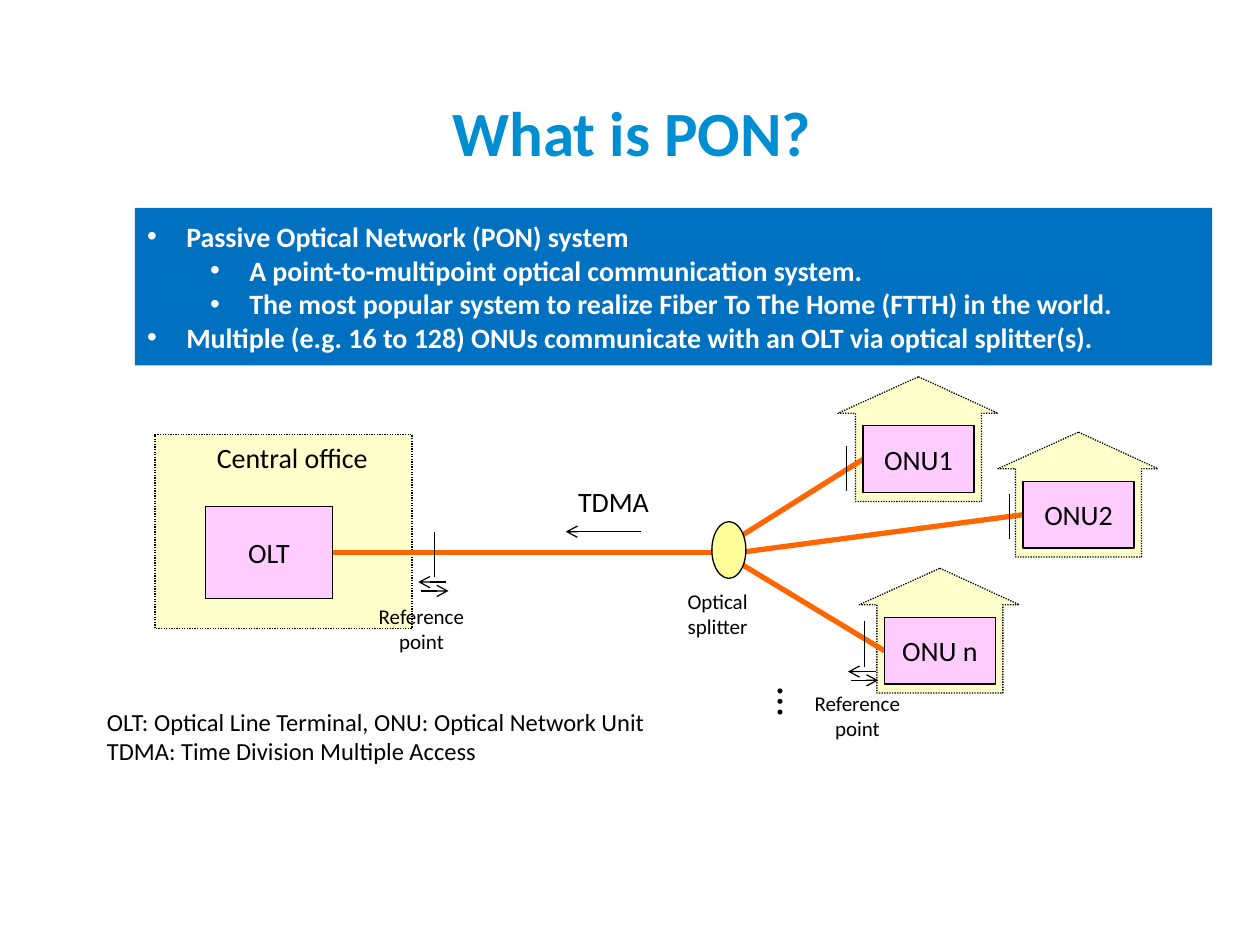
from lxml import etree
from pptx import Presentation, util as u
from pptx.dml.color import RGBColor
from pptx.enum import dml, shapes, text
from pptx.oxml.ns import qn

THEME = {
    "font": "Calibri",
    "title": "008ED3", "panel": "0070C0", "white": "FFFFFF", "ink": "000000",
    "site": "FFFFCC", "unit": "FFCCFF", "splitter": "FFFF99", "fiber": "FF6600",
    "title_size": 36, "dots_size": 24, "body_size": 16, "legend_size": 14, "small_size": 12,
}
LEFT, CENTER = text.PP_ALIGN.LEFT, text.PP_ALIGN.CENTER
TOP, MIDDLE = text.MSO_ANCHOR.TOP, text.MSO_ANCHOR.MIDDLE
OUTLINE = 0.75
Inches = u.Inches

presentation = Presentation()
presentation.slide_width, presentation.slide_height = Inches(10), Inches(7.5)
slide = presentation.slides.add_slide(presentation.slide_layouts[5])


def write(shape, lines, size="body_size", color="ink", bold=False, align=CENTER,
          anchor=TOP, wrap=True, inset=(0.1, 0.05), bullets=None):
    """Fill a shape with paragraphs; bullets holds one left margin per line."""
    frame = shape.text_frame
    side, edge = map(Inches, inset)
    frame_format = {"word_wrap": wrap, "vertical_anchor": anchor, "margin_left": side,
                    "margin_right": side, "margin_top": edge, "margin_bottom": edge,
                    "auto_size": text.MSO_AUTO_SIZE.NONE}
    for name, value in frame_format.items():
        setattr(frame, name, value)
    for index, line in enumerate(lines):
        paragraph = frame.paragraphs[0] if index == 0 else frame.add_paragraph()
        paragraph.text = line
        paragraph.alignment = align
        if bullets:
            properties = paragraph._p.get_or_add_pPr()
            properties.set("marL", str(Inches(bullets[index])))
            properties.set("indent", str(Inches(-0.31)))
            etree.SubElement(properties, qn("a:buFont"), typeface="Arial")
            etree.SubElement(properties, qn("a:buChar"), char="•")
            paragraph.level = int(bullets[index] > bullets[0])
        font_format = {"name": THEME["font"], "size": u.Pt(THEME[size]), "bold": bold}
        for name, value in font_format.items():
            setattr(paragraph.font, name, value)
        paragraph.font.color.rgb = RGBColor.from_string(THEME[color])


def add_line(x1, y1, x2, y2, color="ink", width=OUTLINE, arrow=False):
    line = slide.shapes.add_connector(shapes.MSO_CONNECTOR.STRAIGHT,
                                      *map(Inches, (x1, y1, x2, y2)))
    line.line.color.rgb = RGBColor.from_string(THEME[color])
    line.line.width = u.Pt(width)
    if arrow:
        etree.SubElement(line.line._get_or_add_ln(), qn("a:tailEnd"), type="arrow")
    etree.SubElement(line._element.spPr, qn("a:effectLst"))
    return line


# Title
title = slide.shapes.title
title.left, title.top, title.width, title.height = map(Inches, (0.36, 0.74, 9.31, 0.86))
write(title, ["What is PON?"], "title_size", "title", bold=True, inset=(0, 0))

# Houses: outline relative to the top left corner
HOUSE = [(0.64, 0), (1.27, 0.29), (1.14, 0.29), (1.14, 0.99),
         (0.14, 0.99), (0.14, 0.29), (0, 0.29)]
onus = [("ONU1", 6.65, 2.99), ("ONU2", 7.92, 3.43), ("ONU n", 6.82, 4.51)]
sites = []
for name, left, top in onus:
    corners = [(Inches(left + x), Inches(top + y)) for x, y in HOUSE]
    builder = slide.shapes.build_freeform(*corners[0])
    builder.add_line_segments(corners[1:], close=True)
    sites.append(builder.convert_to_shape())
office = slide.shapes.add_shape(shapes.MSO_SHAPE.RECTANGLE,
                                *map(Inches, (1.23, 3.45, 2.04, 1.54)))
for site in sites + [office]:
    site.shadow.inherit = False
    site.fill.solid()
    site.fill.fore_color.rgb = RGBColor.from_string(THEME["site"])
    site.line.color.rgb = RGBColor.from_string(THEME["ink"])
    site.line.width = u.Pt(OUTLINE)
    site.line.dash_style = dml.MSO_LINE.ROUND_DOT

# Equipment, with a fiber from each unit to the splitter
fiber_starts = [(5.84, 4.28), (5.83, 4.39), (5.69, 4.36)]
olt_left, olt_top, olt_width, olt_height = 1.63, 4.02, 1.01, 0.73
units = [("OLT", olt_left, olt_top, olt_width, olt_height,
          (5.76, olt_top + olt_height / 2), 3)]
for (name, left, top), start in zip(onus, fiber_starts):
    units.append((name, left + 0.2, top + 0.39, 0.88, 0.53, start, 1))
for name, left, top, width, height, start, side in units:
    fiber = add_line(*start, left, top, "fiber", 3)
    unit = slide.shapes.add_shape(shapes.MSO_SHAPE.RECTANGLE,
                                  *map(Inches, (left, top, width, height)))
    unit.shadow.inherit = False
    unit.fill.solid()
    unit.fill.fore_color.rgb = RGBColor.from_string(THEME["unit"])
    unit.line.color.rgb = RGBColor.from_string(THEME["ink"])
    unit.line.width = u.Pt(OUTLINE)
    write(unit, [name], anchor=MIDDLE, inset=(0, 0.05))
    fiber.end_connect(unit, side)

splitter = slide.shapes.add_shape(shapes.MSO_SHAPE.OVAL,
                                  *map(Inches, (5.65, 4.14, 0.27, 0.45)))
splitter.shadow.inherit = False
splitter.fill.solid()
splitter.fill.fore_color.rgb = RGBColor.from_string(THEME["splitter"])
splitter.line.color.rgb = RGBColor.from_string(THEME["ink"])
splitter.line.width = u.Pt(OUTLINE)

# Reference points: a tick, with a pair of arrows below some of them
ticks = [(6.72, 3.54, False), (8.01, 3.92, False), (6.86, 4.93, True), (3.45, 4.22, True)]
for x, y, has_arrows in ticks:
    add_line(x, y, x, y + 0.36)
    if has_arrows:
        add_line(x + 0.09, y + 0.4, x - 0.13, y + 0.4, arrow=True)
        add_line(x - 0.11, y + 0.47, x + 0.11, y + 0.47, arrow=True)
add_line(5.09, 4.22, 4.49, 4.22, arrow=True)

# Labels
labels = [
    (["TDMA"], 4.49, 3.8, 0.77, 0.37, {"align": LEFT, "wrap": False}),
    (["Central office"], 1.15, 3.45, 2.34, 0.37, {}),
    (["Optical splitter"], 5.2, 4.62, 0.99, 0.5, {"size": "small_size"}),
    (["Reference point"], 6.18, 5.43, 1.25, 0.5, {"size": "small_size"}),
    (["Reference point"], 2.72, 4.74, 1.25, 0.5, {"size": "small_size"}),
    (["OLT: Optical Line Terminal, ONU: Optical Network Unit",
      "TDMA: Time Division Multiple Access"], 0.75, 5.56, 4.56, 0.57,
     {"size": "legend_size", "align": LEFT, "wrap": False}),
]
for lines, left, top, width, height, label_format in labels:
    label = slide.shapes.add_textbox(*map(Inches, (left, top, width, height)))
    write(label, lines, **label_format)

more_onus = slide.shapes.add_textbox(*map(Inches, (5.81, 5.32, 0.99, 0.5)))
more_onus.rotation = 90
write(more_onus, ["…"], "dots_size")

# Summary panel
panel = slide.shapes.add_shape(shapes.MSO_SHAPE.RECTANGLE,
                               *map(Inches, (1.07, 1.65, 8.55, 1.25)))
panel.shadow.inherit = False
panel.fill.solid()
panel.fill.fore_color.rgb = RGBColor.from_string(THEME["panel"])
panel.line.fill.background()
write(panel, [
    "Passive Optical Network (PON) system",
    "A point-to-multipoint optical communication system.",
    "The most popular system to realize Fiber To The Home (FTTH) in the world.",
    "Multiple (e.g. 16 to 128) ONUs communicate with an OLT via optical splitter(s).",
], color="white", bold=True, align=LEFT, anchor=MIDDLE, bullets=[0.31, 0.81, 0.81, 0.31])

presentation.save("out.pptx")
